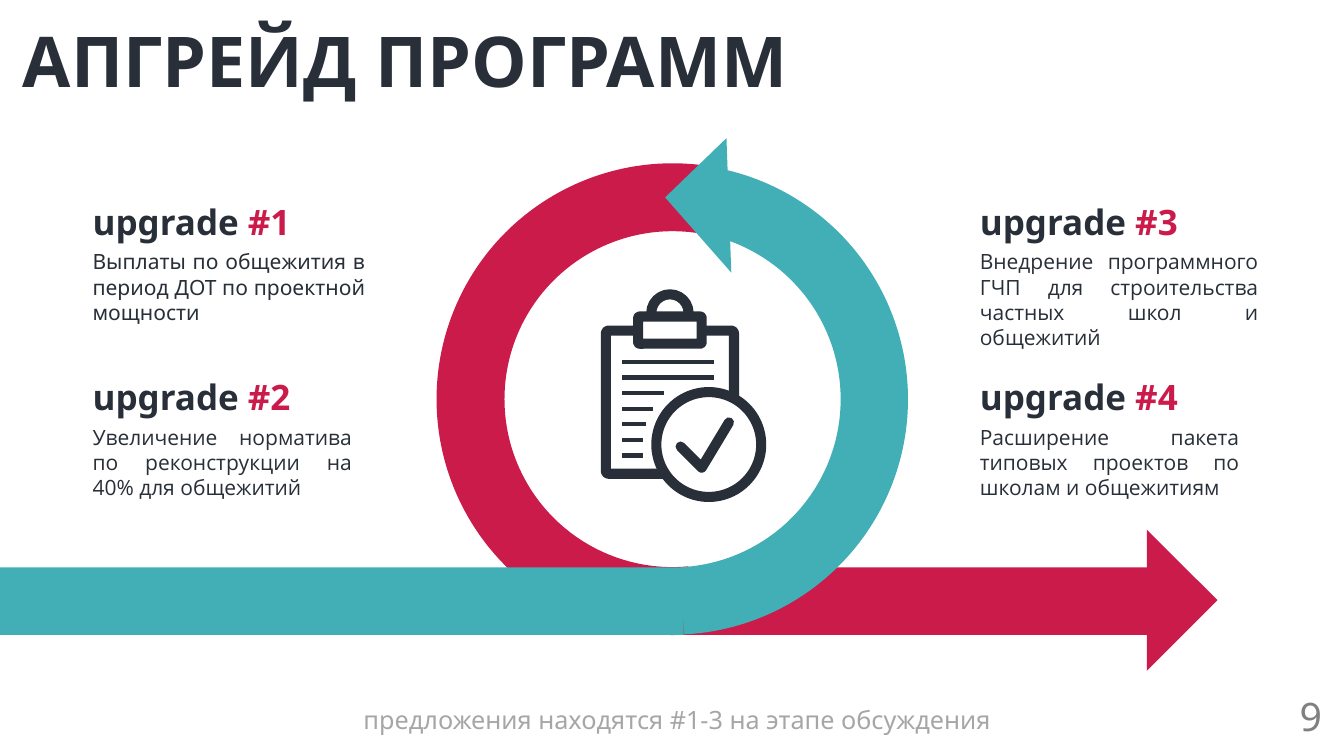
from lxml.etree import SubElement
from pptx import Presentation
from pptx.dml.color import RGBColor
from pptx.enum.shapes import MSO_CONNECTOR, MSO_SHAPE
from pptx.enum.text import PP_ALIGN
from pptx.oxml.ns import qn
from pptx.util import Inches, Pt

COLORS = {"dark": "282F39", "red": "CB1B4A", "teal": "42AFB6",
          "white": "FFFFFF", "note": "A6A6A6", "number": "808080"}
TITLE = "АПГРЕЙД ПРОГРАММ"
NOTE = "предложения находятся #1-3 на этапе обсуждения"
PAGE_NUMBER = "9"
UPGRADES = [
    ("#1", "Выплаты по общежития в период ДОТ по проектной мощности", "Noto Sans", 2.9),
    ("#2", "Увеличение норматива по реконструкции на 40% для общежитий", "Open Sans", 2.77),
    ("#3", "Внедрение программного ГЧП для строительства частных школ и общежитий", "Open Sans", 2.96),
    ("#4", "Расширение пакета типовых проектов по школам и общежитиям", "Open Sans", 2.77),
]
COLUMN_LEFTS = (0.82, 9.62)
ROW_TOPS = (1.94, 3.68)
CHECKLIST_RIGHTS = (7.08, 7.08, 6.59, 6.48, 6.41, 6.38, 6.38)
CHECKLIST_LEFT, CHECKLIST_TOP, CHECKLIST_STEP = 6.17, 3.59, 0.155
CHECK_MARK = [(6.75, 4.43), (6.96, 4.64), (7.23, 4.19)]
ICON_STROKE = 7.2
RED_ARC = (91.24, 210.23, 0.144)
TEAL_ARROW = (0.125, 10.98, 204.58, 108, 0.125)

deck = Presentation()
deck.slide_width, deck.slide_height = Inches(13.33), Inches(7.5)
page = deck.slides.add_slide(deck.slide_layouts[6])
shapes = page.shapes


def color(name):
    return RGBColor.from_string(COLORS[name])


def add_solid(kind, place, fill, adjustments=(), rotation=0, flipped=False):
    shape = shapes.add_shape(kind, *map(Inches, place))
    shape.shadow.inherit = False
    shape.fill.solid()
    shape.fill.fore_color.rgb = color(fill)
    shape.line.fill.background()
    for index, value in enumerate(adjustments):
        shape.adjustments[index] = value
    shape.rotation = rotation
    if flipped:
        shape.element.spPr.xfrm.set("flipH", "1")
    return shape


def outline(shape):
    shape.line.color.rgb = color("dark")
    shape.line.width = Pt(ICON_STROKE)


def add_text(place, spans, size, font, bold=False, align=PP_ALIGN.LEFT, wrap=True):
    box = shapes.add_textbox(*map(Inches, place))
    box.text_frame.word_wrap = wrap
    para = box.text_frame.paragraphs[0]
    para.alignment = align
    for text, name in spans:
        span = para.add_run()
        span.text = text
        span.font.name = font
        span.font.size = Pt(size)
        span.font.bold = bold
        span.font.color.rgb = color(name)


add_solid(MSO_SHAPE.RECTANGLE, (6.39, 5.63, 5.11, 0.67), "red")
add_text((0.13, 0.12, 11.77, 0.94), [(TITLE, "dark")], 50, "Noto Sans", bold=True)
add_solid(MSO_SHAPE.BLOCK_ARC, (4.33, 1.62, 4.68, 4.68), "red", RED_ARC, 255, True)
add_solid(MSO_SHAPE.CIRCULAR_ARROW, (4, 1.29, 5.34, 5.34), "teal", TEAL_ARROW, 87.2, True)
add_solid(MSO_SHAPE.RECTANGLE, (0, 5.63, 6.78, 0.67), "teal")
add_solid(MSO_SHAPE.RIGHT_TRIANGLE, (10.88, 5.46, 0.99, 0.99), "red", rotation=225)

outline(add_solid(MSO_SHAPE.ROUNDED_RECTANGLE, (6.01, 3.28, 1.27, 1.42), "white", (0.02,)))
outline(add_solid(MSO_SHAPE.OVAL, (6.46, 2.92, 0.37, 0.37), "white"))
outline(add_solid(MSO_SHAPE.ROUNDED_RECTANGLE, (6.33, 3.14, 0.63, 0.27), "white", (0.05,)))
outline(add_solid(MSO_SHAPE.OVAL, (6.51, 3.89, 1.04, 1.04), "white"))

builder = shapes.build_freeform(*map(Inches, CHECK_MARK[0]))
builder.add_line_segments([tuple(map(Inches, point)) for point in CHECK_MARK[1:]], close=False)
check = builder.convert_to_shape()
check.shadow.inherit = False
check.fill.background()
outline(check)
check_line = check.element.spPr.find(qn("a:ln"))
check_line.set("cap", "rnd")
SubElement(check_line, qn("a:round"))

for index, right in enumerate(CHECKLIST_RIGHTS):
    top = Inches(CHECKLIST_TOP + index * CHECKLIST_STEP)
    line = shapes.add_connector(MSO_CONNECTOR.STRAIGHT, Inches(CHECKLIST_LEFT), top, Inches(right), top)
    line.line.color.rgb = color("dark")
    line.line.width = Pt(3)
    SubElement(line.element.spPr, qn("a:effectLst"))

for index, (number, text, font, width) in enumerate(UPGRADES):
    column, row = divmod(index, len(ROW_TOPS))
    left, top = COLUMN_LEFTS[column], ROW_TOPS[row]
    add_text((left, top + 0.48, width, 0.86), [(text, "dark")], 15, font, align=PP_ALIGN.JUSTIFY)
    add_text((left, top, 2.17, 0.52), [("upgrade ", "dark"), (number, "red")], 25, "Noto Sans",
             bold=True, align=PP_ALIGN.JUSTIFY)

add_text((0.5, 6.94, 12.43, 0.4), [(NOTE, "note")], 18, "Noto Sans", align=PP_ALIGN.CENTER)
add_text((12.79, 6.82, 0.42, 0.57), [(PAGE_NUMBER, "number")], 28, "Noto Sans", wrap=False)

deck.save("out.pptx")
